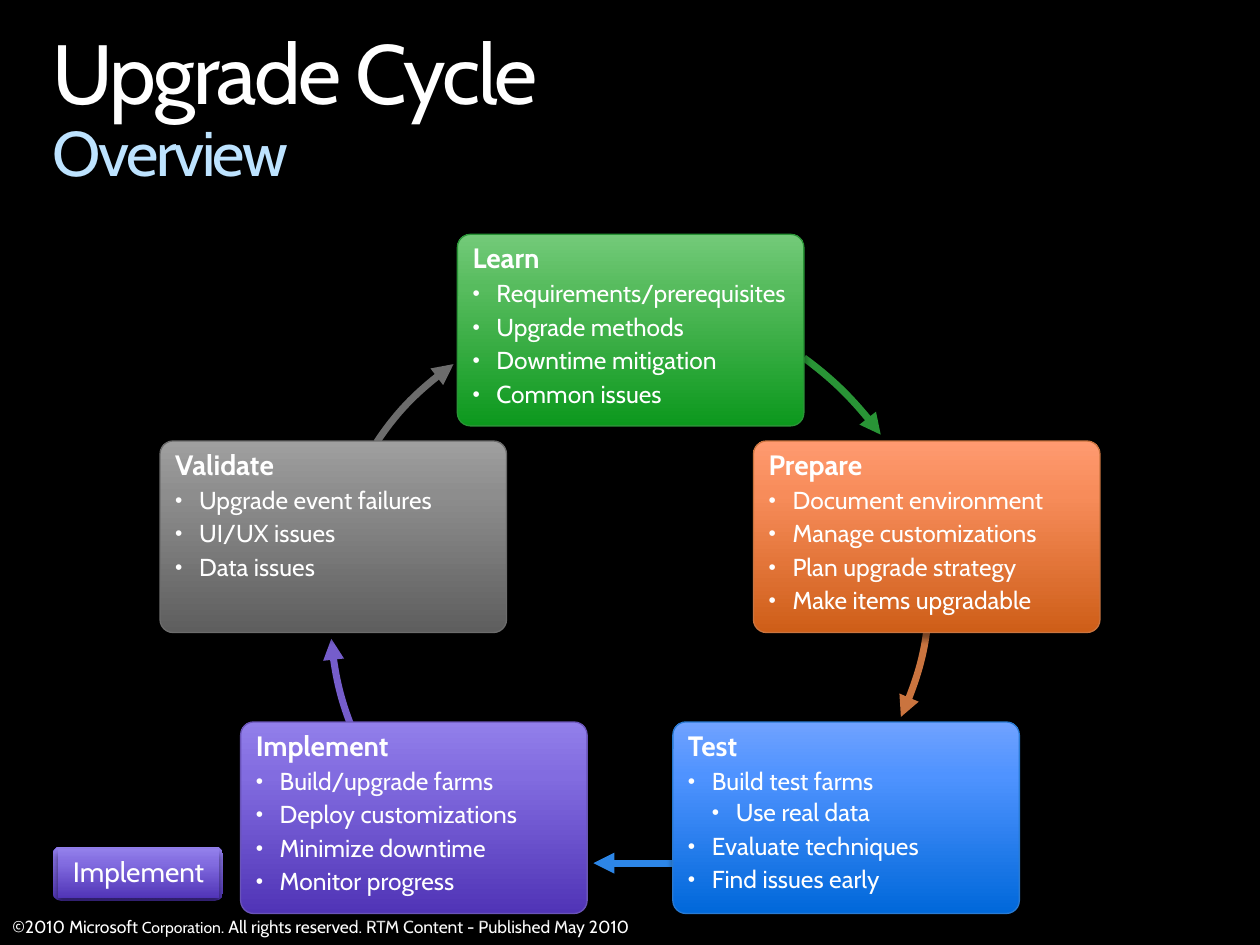
from copy import deepcopy
from math import cos, radians, sin
from typing import NamedTuple

from lxml.etree import SubElement
from pptx import Presentation
from pptx.dml.color import RGBColor
from pptx.enum.shapes import MSO_CONNECTOR, MSO_SHAPE
from pptx.enum.text import MSO_ANCHOR, PP_ALIGN
from pptx.oxml.ns import qn
from pptx.util import Inches, Pt

FONT = "Cabin"
WHITE = "FFFFFF"
CARD_WIDTH, CARD_HEIGHT = 2.75, 1.52
RING = 5.19
INDENT = 0.19
PURPLE = ("5034B6", "826CE0", "927FEA")


class Bullet(NamedTuple):
    text: str
    depth: int = 1


class Stage(NamedTuple):
    name: str
    left: float
    top: float
    gradient: tuple[str, str, str]
    outline: str
    bullets: list[Bullet]


class Arc(NamedTuple):
    color: str
    left: float
    top: float
    rotation: float
    points: list[tuple[float, float]]


STAGES = [
    Stage("Learn", 3.63, 1.86, ("0C981D", "57BC5E", "73CA79"), "299436",
          [Bullet("Requirements/prerequisites"), Bullet("Upgrade methods"),
           Bullet("Downtime mitigation"), Bullet("Common issues")]),
    Stage("Validate", 1.27, 3.5, ("5E5E5E", "8D8D8D", "9F9F9F"), "6C6C6C",
          [Bullet("Upgrade event failures"), Bullet("UI/UX issues"),
           Bullet("Data issues")]),
    Stage("Prepare", 5.98, 3.5, ("CE5E18", "F78C5A", "FF9A70"), "CA743F",
          [Bullet("Document environment"), Bullet("Manage customizations"),
           Bullet("Plan upgrade strategy"), Bullet("Make items upgradable")]),
    Stage("Implement", 1.91, 5.73, PURPLE, "6A54B8",
          [Bullet("Build/upgrade farms"), Bullet("Deploy customizations"),
           Bullet("Minimize downtime"), Bullet("Monitor progress")]),
    Stage("Test", 5.34, 5.73, ("0068DA", "4F93FF", "70A2FF"), "297AD2",
          [Bullet("Build test farms"), Bullet("Use real data", 2),
           Bullet("Evaluate techniques"), Bullet("Find issues early")]),
]

ARCS = [
    Arc("6C6C6C", 2.51, 2.41, 60,
        [(2.99, 3.51), (3.15, 3.27), (3.36, 3.06), (3.6, 2.89)]),
    Arc("299436", 2.28, 2.36, 150,
        [(6.38, 2.84), (6.61, 3.01), (6.82, 3.22), (6.99, 3.45)]),
    Arc("CA743F", 2.2, 2.01, 0,
        [(7.37, 4.85), (7.35, 5.14), (7.27, 5.43), (7.15, 5.69)]),
    Arc("755DCB", 2.61, 2.23, 0,
        [(2.85, 5.91), (2.73, 5.64), (2.65, 5.36), (2.63, 5.07)]),
]


def rgb(value: str) -> RGBColor:
    return RGBColor.from_string(value)


def add_span(para, text: str, *, size: float, color: str = WHITE,
             bold: bool = False, spacing: float = 0) -> None:
    span = para.add_run()
    span.text = text
    span.font.name = FONT
    span.font.size = Pt(size)
    span.font.bold = bold
    span.font.color.rgb = rgb(color)
    if spacing:
        span.font._element.set("spc", str(int(spacing * 100)))


def set_frame(frame, inset: float = 0) -> None:
    frame.word_wrap = True
    frame.margin_left = frame.margin_right = Inches(inset)
    frame.margin_top = frame.margin_bottom = Inches(inset)


def add_text_frame(page, left: float, top: float, width: float, height: float):
    box = page.shapes.add_textbox(
        Inches(left), Inches(top), Inches(width), Inches(height))
    set_frame(box.text_frame)
    return box.text_frame


def add_panel(page, kind, left: float, top: float, width: float, height: float,
              gradient: tuple[str, str, str], outline: str | None = None,
              radius: float | None = None):
    panel = page.shapes.add_shape(
        kind, Inches(left), Inches(top), Inches(width), Inches(height))
    if radius is not None:
        panel.adjustments[0] = radius
    panel.fill.gradient()
    panel.fill.gradient_angle = 90
    stop_list = next(panel._element.spPr.iter(qn("a:gsLst")))
    stop_list.append(deepcopy(stop_list[0]))
    for stop, color, position in zip(panel.fill.gradient_stops, gradient, (0, 0.72, 1)):
        stop.color.rgb = rgb(color)
        stop.position = position
    if outline:
        panel.line.color.rgb = rgb(outline)
        panel.line.width = Pt(0.75)
    else:
        panel.line.fill.background()
    panel.shadow.inherit = False
    shadow = SubElement(
        panel._element.spPr.find(qn("a:effectLst")), qn("a:outerShdw"),
        blurRad=str(Pt(4)), dist=str(Pt(3)), dir="5400000", rotWithShape="0")
    shade = SubElement(shadow, qn("a:srgbClr"), val="000000")
    SubElement(shade, qn("a:alpha"), val="43000")
    return panel


def style_arrow(arrow, color: str) -> None:
    arrow.line.color.rgb = rgb(color)
    arrow.line.width = Pt(4)
    properties = arrow._element.spPr
    SubElement(properties.find(qn("a:ln")), qn("a:tailEnd"), type="triangle")
    SubElement(properties, qn("a:effectLst"))


def ring_point(arc: Arc, point: tuple[float, float]) -> tuple[int, int]:
    turn = radians(arc.rotation)
    across = point[0] - arc.left - RING / 2
    down = point[1] - arc.top - RING / 2
    return (Inches(RING / 2 + across * cos(turn) + down * sin(turn)),
            Inches(RING / 2 - across * sin(turn) + down * cos(turn)))


def add_arc(page, arc: Arc) -> None:
    points = [ring_point(arc, point) for point in arc.points]
    builder = page.shapes.build_freeform(*points[0])
    builder.add_line_segments(points[1:], close=False)
    curve = builder.convert_to_shape()
    curve.left, curve.top = Inches(arc.left), Inches(arc.top)
    curve.width = curve.height = Inches(RING)
    curve.rotation = arc.rotation
    curve.fill.background()
    outline = next(curve._element.spPr.iter(qn("a:path")))
    outline.set("w", str(Inches(RING)))
    outline.set("h", str(Inches(RING)))
    for node, (x, y) in zip(outline.iter(qn("a:pt")), points):
        node.set("x", str(x))
        node.set("y", str(y))
    bezier = SubElement(outline, qn("a:cubicBezTo"))
    for segment in outline.findall(qn("a:lnTo")):
        bezier.append(segment[0])
        outline.remove(segment)
    style_arrow(curve, arc.color)


def add_bullet(frame, bullet: Bullet) -> None:
    para = frame.add_paragraph()
    properties = para._p.get_or_add_pPr()
    properties.set("marL", str(Inches(INDENT * bullet.depth)))
    properties.set("indent", str(Inches(-INDENT)))
    SubElement(properties, qn("a:buSzPct"), val="85000")
    SubElement(properties, qn("a:buFont"), typeface="Arial")
    SubElement(properties, qn("a:buChar"), char="•")
    para.line_spacing = 0.9
    para.space_before = Pt(4 if bullet.depth == 1 else 2.8)
    add_span(para, bullet.text, size=14)


def add_stage(page, stage: Stage) -> None:
    add_panel(page, MSO_SHAPE.ROUNDED_RECTANGLE, stage.left, stage.top, CARD_WIDTH,
              CARD_HEIGHT, stage.gradient, stage.outline, 0.068)
    frame = add_text_frame(page, stage.left + 0.12, stage.top + 0.08, 2.59, 1.38)
    heading = frame.paragraphs[0]
    heading.line_spacing = 0.9
    add_span(heading, stage.name, size=16, bold=True)
    for bullet in stage.bullets:
        add_bullet(frame, bullet)


def add_title(page) -> None:
    para = add_text_frame(page, 0.42, 0.25, 9.17, 1.27).paragraphs[0]
    para.line_spacing = 0.9
    add_span(para, "Upgrade Cycle", size=48, spacing=-1.5)
    para.add_line_break()
    add_span(para, "Overview", size=36, color="BDE3FF", spacing=-1.5)


def add_copyright(page) -> None:
    frame = add_text_frame(page, 0, 7.22, 10, 0.28)
    frame.margin_left = frame.margin_right = Inches(0.1)
    frame.margin_top = frame.margin_bottom = Inches(0.05)
    para = frame.paragraphs[0]
    add_span(para, "©2010 Microsoft ", size=10)
    add_span(para, "Corporation", size=9)
    add_span(para, ". All rights reserved. RTM Content - Published May 2010", size=10)


def add_phase_tag(page) -> None:
    add_panel(page, MSO_SHAPE.ROUNDED_RECTANGLE, 0.42, 6.72, 1.35, 0.43,
              PURPLE, radius=0.148)
    label = add_panel(page, MSO_SHAPE.RECTANGLE, 0.46, 6.74, 1.28, 0.39, PURPLE)
    set_frame(label.text_frame, 0.07)
    label.text_frame.vertical_anchor = MSO_ANCHOR.MIDDLE
    para = label.text_frame.paragraphs[0]
    para.alignment = PP_ALIGN.CENTER
    para.line_spacing = 0.9
    add_span(para, "Implement", size=16)


def main() -> None:
    """Build the upgrade cycle slide and save it."""
    deck = Presentation()
    deck.slide_width, deck.slide_height = Inches(10), Inches(7.5)
    page = deck.slides.add_slide(deck.slide_layouts[6])
    page.background.fill.solid()
    page.background.fill.fore_color.rgb = rgb("000000")
    add_copyright(page)
    add_phase_tag(page)
    add_title(page)
    for arc in ARCS:
        add_arc(page, arc)
    arrow = page.shapes.add_connector(
        MSO_CONNECTOR.STRAIGHT, Inches(5.42), Inches(6.85), Inches(4.71), Inches(6.85))
    style_arrow(arrow, "2D86E7")
    for stage in STAGES:
        add_stage(page, stage)
    deck.save("out.pptx")


if __name__ == "__main__":
    main()
